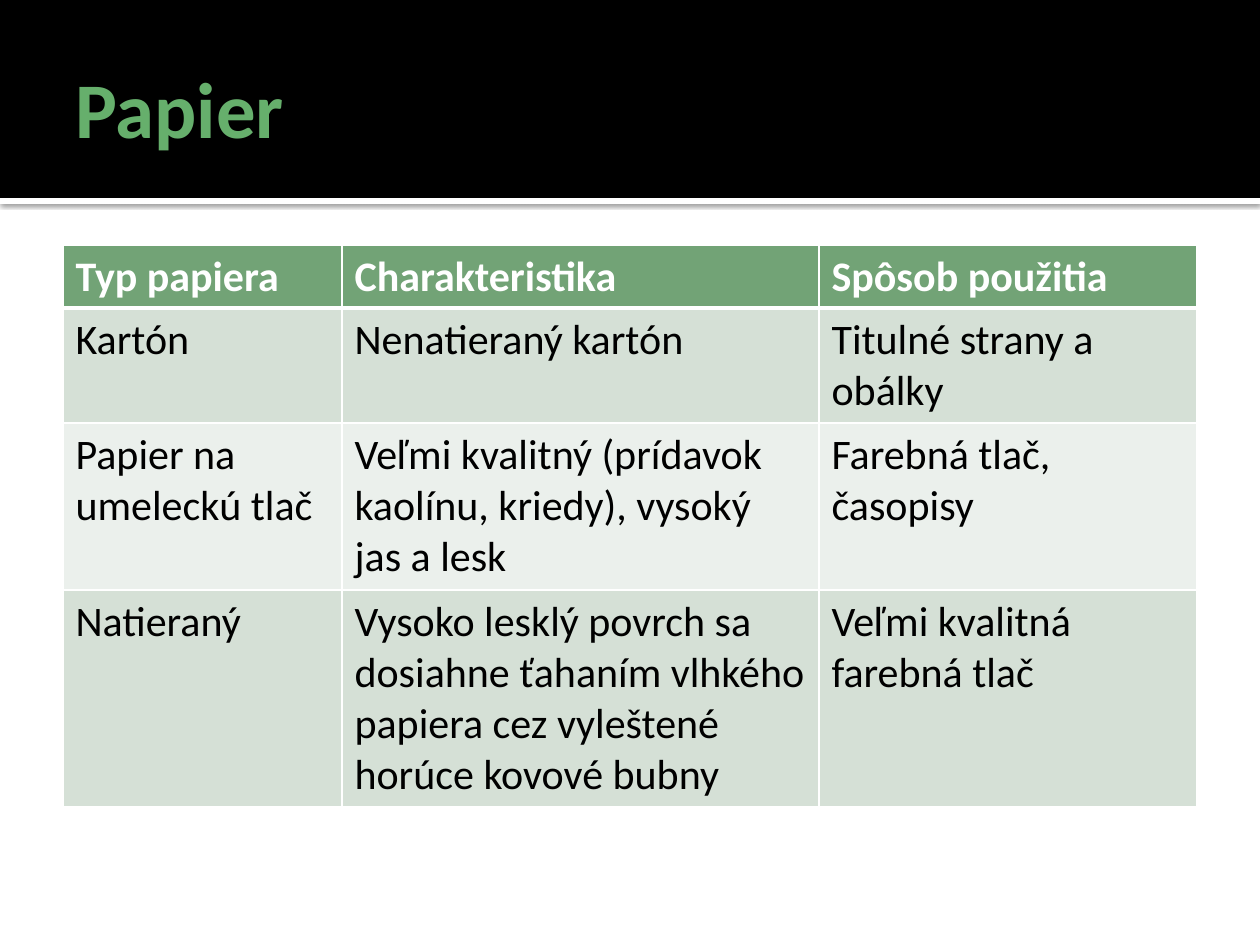
from lxml import etree
from pptx import Presentation
from pptx import util as u
from pptx.dml.color import RGBColor
from pptx.enum import shapes, text
from pptx.oxml import parse_xml
from pptx.oxml.ns import nsdecls, qn

PX_PER_INCH = 126
FONT = "Calibri"
BLACK = RGBColor(0x00, 0x00, 0x00)
WHITE = RGBColor(0xFF, 0xFF, 0xFF)
TITLE_GREEN = RGBColor(0x66, 0xAF, 0x6C)
HEADER_GREEN = RGBColor(0x72, 0xA3, 0x76)
BAND_DARK = RGBColor(0xD5, 0xE0, 0xD6)
BAND_LIGHT = RGBColor(0xEB, 0xF0, 0xEC)

COLUMN_WIDTHS = [279, 477, 378]
ROW_HEIGHTS = [63, 115, 167, 217]
PAPER_ROWS = [
    ["Typ papiera", "Charakteristika", "Spôsob použitia"],
    ["Kartón", "Nenatieraný kartón", "Titulné strany a obálky"],
    ["Papier na umeleckú tlač",
     "Veľmi kvalitný (prídavok kaolínu, kriedy), vysoký jas a lesk",
     "Farebná tlač, časopisy"],
    ["Natieraný",
     "Vysoko lesklý povrch sa dosiahne ťahaním vlhkého papiera cez "
     "vyleštené horúce kovové bubny",
     "Veľmi kvalitná farebná tlač"],
]


def px(length):
    return u.Emu(round(length * 914400 / PX_PER_INCH))


def style_text(frame, size, color, bold):
    for paragraph in frame.paragraphs:
        for run in paragraph.runs:
            run.font.name = FONT
            run.font.size = u.Pt(size)
            run.font.bold = bold
            run.font.color.rgb = color


def add_band(slide, top, height, color):
    band = slide.shapes.add_shape(
        shapes.MSO_SHAPE.RECTANGLE, 0, px(top), px(1260), px(height))
    band.shadow.inherit = False
    band.fill.solid()
    band.fill.fore_color.rgb = color
    band.line.fill.background()
    return band


def add_drop_shadow(band):
    effects = band._element.spPr.find(qn("a:effectLst"))
    effects.append(parse_xml(
        f'<a:outerShdw {nsdecls("a")} blurRad="{u.Pt(2.5)}" dist="{u.Pt(0.8)}" '
        'dir="5400000" algn="t" rotWithShape="0"><a:srgbClr val="000000">'
        '<a:alpha val="60000"/></a:srgbClr></a:outerShdw>'))


def add_title(slide, wording):
    title = slide.shapes.add_textbox(px(63), px(21), px(1134), px(173))
    frame = title.text_frame
    frame.word_wrap = True
    frame.vertical_anchor = text.MSO_ANCHOR.MIDDLE
    frame.margin_left = u.Inches(0.1)
    frame.margin_right = u.Inches(0.05)
    frame.text = wording
    style_text(frame, 45, TITLE_GREEN, True)


def set_borders(cell, widths):
    properties = cell._tc.get_or_add_tcPr()
    for side, width in widths.items():
        line = etree.SubElement(properties, qn(f"a:ln{side}"), w=str(u.Pt(width)))
        fill = etree.SubElement(line, qn("a:solidFill"))
        etree.SubElement(fill, qn("a:srgbClr"), val=str(WHITE))


def add_paper_table(slide):
    table = slide.shapes.add_table(
        len(PAPER_ROWS), len(COLUMN_WIDTHS), px(63), px(245),
        px(sum(COLUMN_WIDTHS)), px(sum(ROW_HEIGHTS))).table
    for column, width in zip(table.columns, COLUMN_WIDTHS):
        column.width = px(width)
    for row, height in zip(table.rows, ROW_HEIGHTS):
        row.height = px(height)
    for r, wordings in enumerate(PAPER_ROWS):
        header = r == 0
        band_color = BAND_DARK if r % 2 else BAND_LIGHT
        for c, wording in enumerate(wordings):
            cell = table.cell(r, c)
            set_borders(cell, {"L": 1, "R": 1, "T": 3 if r == 1 else 1,
                               "B": 3 if header else 1})
            cell.fill.solid()
            cell.fill.fore_color.rgb = HEADER_GREEN if header else band_color
            cell.text_frame.text = wording
            style_text(cell.text_frame, 24, WHITE if header else BLACK, header)


def main():
    presentation = Presentation()
    presentation.slide_width = px(1260)
    presentation.slide_height = px(945)
    slide = presentation.slides.add_slide(presentation.slide_layouts[6])
    add_drop_shadow(add_band(slide, 198, 6, WHITE))
    add_band(slide, 0, 198, BLACK)
    add_title(slide, "Papier")
    add_paper_table(slide)
    presentation.save("out.pptx")


if __name__ == "__main__":
    main()
